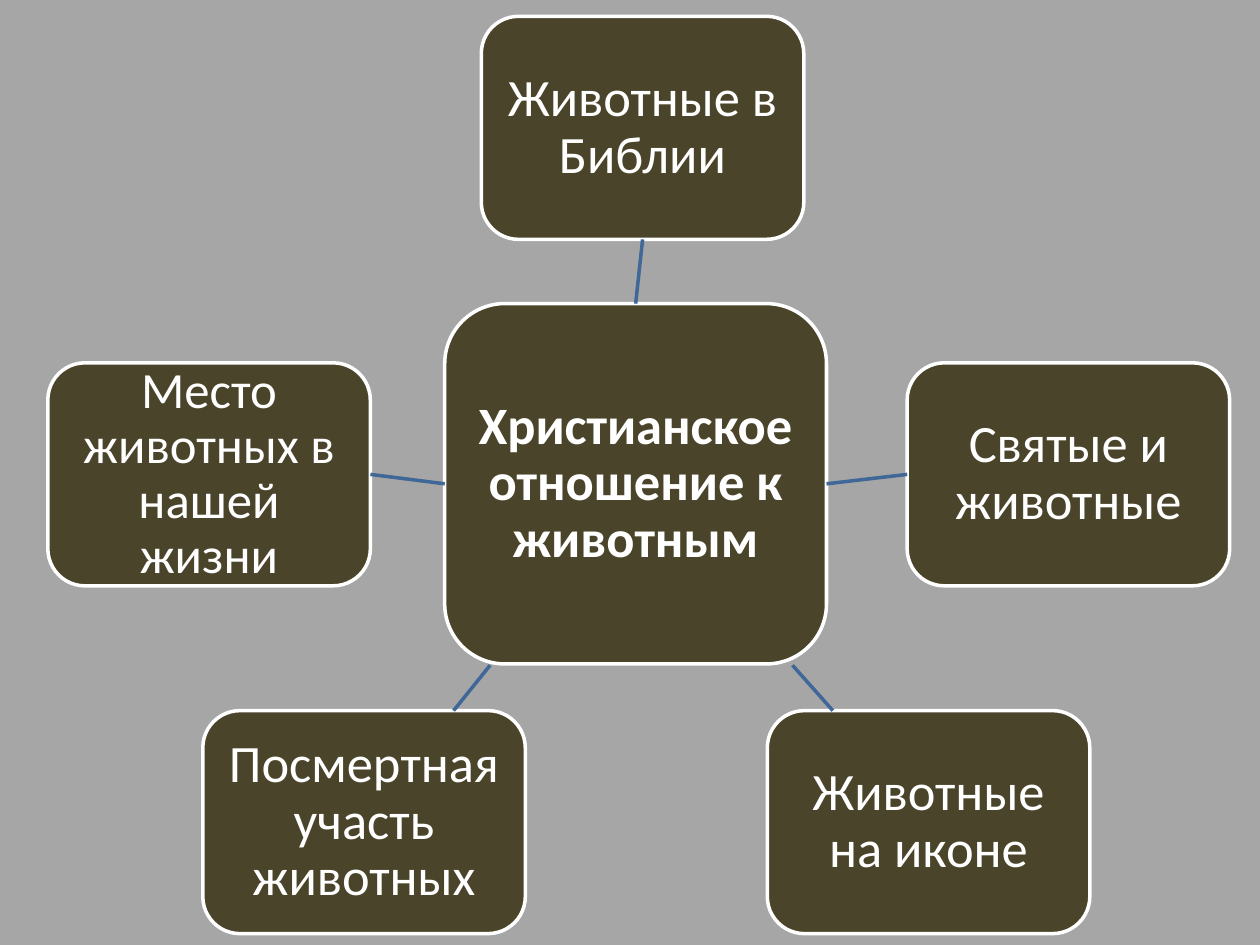
from lxml import etree
from pptx import Presentation
from pptx.dml.color import RGBColor
from pptx.enum.shapes import MSO_CONNECTOR, MSO_SHAPE
from pptx.enum.text import MSO_ANCHOR, PP_ALIGN
from pptx.oxml.ns import qn
from pptx.util import Inches, Pt

ROUND = MSO_SHAPE.ROUNDED_RECTANGLE
STRAIGHT = MSO_CONNECTOR.STRAIGHT
MIDDLE = MSO_ANCHOR.MIDDLE
CENTER = PP_ALIGN.CENTER

GREY = RGBColor(0xA6, 0xA6, 0xA6)
OLIVE = RGBColor(0x4A, 0x45, 0x2A)
WHITE = RGBColor(0xFF, 0xFF, 0xFF)
BLUE = RGBColor(0x3F, 0x67, 0x97)

TOP, LEFT, BOTTOM, RIGHT = range(4)
NODE_W, NODE_H = 2.56, 1.77


class Map:
    font = "Calibri"
    inset = Inches(0.08)
    line = Pt(2)

    def __init__(self, slide):
        self.slide = slide
        fill = slide.background.fill
        fill.solid()
        fill.fore_color.rgb = GREY

    def box(self, x, y, w, h, text, size=30, bold=False):
        shape = self.slide.shapes.add_shape(
            ROUND, Inches(x), Inches(y), Inches(w), Inches(h))
        shape.shadow.inherit = False
        shape.fill.solid()
        shape.fill.fore_color.rgb = OLIVE
        shape.line.color.rgb = WHITE
        shape.line.width = self.line
        frame = shape.text_frame
        frame.word_wrap = True
        frame.vertical_anchor = MIDDLE
        frame.margin_left = frame.margin_right = self.inset
        frame.margin_top = frame.margin_bottom = self.inset
        para = frame.paragraphs[0]
        para.alignment = CENTER
        para.line_spacing = 0.9
        run = para.add_run()
        run.text = text
        run.font.name = self.font
        run.font.size = Pt(size)
        run.font.bold = bold
        run.font.color.rgb = WHITE
        return shape

    def link(self, x1, y1, x2, y2):
        wire = self.slide.shapes.add_connector(
            STRAIGHT, Inches(x1), Inches(y1), Inches(x2), Inches(y2))
        wire.line.color.rgb = BLUE
        wire.line.width = self.line
        etree.SubElement(wire._element.spPr, qn("a:effectLst"))
        return wire

    def join(self, a, a_side, b, b_side):
        wire = self.link(0, 0, 1, 1)
        wire.begin_connect(a, a_side)
        wire.end_connect(b, b_side)


def main():
    deck = Presentation()
    deck.slide_width, deck.slide_height = Inches(10), Inches(7.5)
    board = Map(deck.slides.add_slide(deck.slide_layouts[6]))

    # Central topic
    hub = board.box(3.53, 2.41, 3.03, 2.86,
                    "Христианское отношение к животным", bold=True)

    # Topics clockwise from the top: place, text, size, facing sides
    nodes = [
        (3.82, 0.13, "Животные в Библии", 30, (TOP, BOTTOM)),
        (7.2, 2.88, "Святые и животные", 30, (RIGHT, LEFT)),
        (6.09, 5.64, "Животные на иконе", 30, None),
        (1.61, 5.64, "Посмертная участь животных", 30, None),
        (0.38, 2.88, "Место животных в нашей жизни", 29, (LEFT, RIGHT)),
    ]
    for x, y, text, size, sides in nodes:
        node = board.box(x, y, NODE_W, NODE_H, text, size)
        if sides:
            board.join(hub, sides[0], node, sides[1])

    # Slanted links to the two lower topics
    board.link(6.29, 5.28, 6.61, 5.64)
    board.link(3.89, 5.28, 3.6, 5.64)

    deck.save("out.pptx")


if __name__ == "__main__":
    main()
